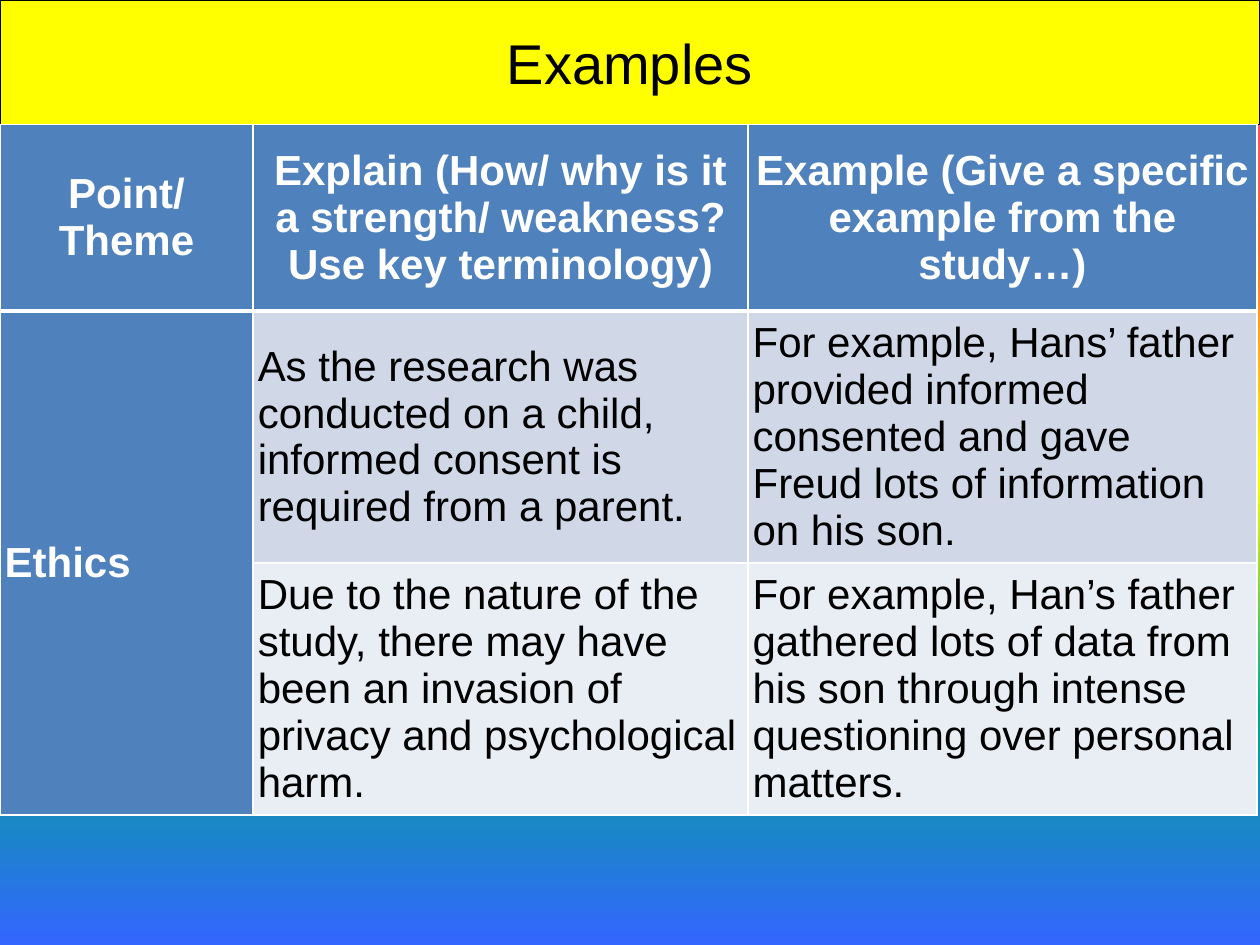
from lxml.etree import SubElement
from pptx import Presentation
from pptx.dml.color import RGBColor as RGB
from pptx.enum.text import MSO_ANCHOR as Anchor, PP_ALIGN as Align
from pptx.oxml.ns import qn
from pptx.util import Pt

TITLE = "Examples"
HEADERS = [
    "Point/ Theme",
    "Explain (How/ why is it a strength/ weakness? Use key terminology)",
    "Example (Give a specific example from the study…)",
]
POINTS = [
    ("Ethics",
     "As the research was conducted on a child, informed consent is required from a parent.",
     "For example, Hans’ father provided informed consented and gave Freud lots of information "
     "on his son."),
    ("",
     "Due to the nature of the study, there may have been an invasion of privacy and "
     "psychological harm.",
     "For example, Han’s father gathered lots of data from his son through intense questioning "
     "over personal matters."),
]

THEME = {
    "font": "Arial", "title_size": 32, "cell_size": 24,
    "dark": "000000", "light": "FFFFFF", "title_fill": "FFFF00",
    "head_fill": "4F81BD", "bands": ["D0D8E8", "E9EDF4"],
    "sky": ["FF3399", "FF6633", "FFFF00", "01A78F", "3366FF"],
}
SLIDE_W, SLIDE_H = 720, 540
TITLE_H = 71.2
COL_WIDTHS = [144.6, 282.8, 290.9]
ROW_HEIGHTS = [106.5, 144, 144]
INSET = 2.7


def write(tf, text, size=THEME["cell_size"], color=THEME["dark"], bold=False, align=Align.LEFT):
    tf.word_wrap = True
    p = tf.paragraphs[0]
    p.alignment = align
    r = p.add_run()
    r.text = text
    r.font.name = THEME["font"]
    r.font.size = Pt(size)
    r.font.bold = bold
    r.font.color.rgb = RGB.from_string(color)


def paint_background(s, colors):
    fill = s.background.fill
    fill.gradient()
    fill.gradient_angle = 270
    stops = s.element.find(".//" + qn("a:gsLst"))
    stops.clear()
    for i, color in enumerate(colors):
        stop = SubElement(stops, qn("a:gs"), pos=str(100000 * i // (len(colors) - 1)))
        SubElement(stop, qn("a:srgbClr"), val=color)


def add_borders(cell, **widths):
    props = cell._tc.get_or_add_tcPr()
    for i, (side, width) in enumerate(widths.items()):
        ln = SubElement(props, qn(f"a:ln{side}"), w=str(Pt(width)))
        SubElement(SubElement(ln, qn("a:solidFill")), qn("a:srgbClr"), val=THEME["light"])
        props.insert(i, ln)


def add_title(s):
    sp = s.shapes.title
    sp.left, sp.top, sp.width, sp.height = Pt(0), Pt(0), Pt(SLIDE_W), Pt(TITLE_H)
    sp.fill.solid()
    sp.fill.fore_color.rgb = RGB.from_string(THEME["title_fill"])
    sp.line.color.rgb = RGB.from_string(THEME["dark"])
    sp.line.width = Pt(0.75)
    sp.text_frame.vertical_anchor = Anchor.MIDDLE
    write(sp.text_frame, TITLE, size=THEME["title_size"], align=Align.CENTER)


def add_points_table(s):
    rows = [HEADERS, *POINTS]
    table = s.shapes.add_table(len(rows), len(HEADERS), Pt(0), Pt(TITLE_H),
                               Pt(sum(COL_WIDTHS)), Pt(sum(ROW_HEIGHTS))).table
    table.first_row = table.horz_banding = False
    for col, width in zip(table.columns, COL_WIDTHS):
        col.width = Pt(width)
    for row, height in zip(table.rows, ROW_HEIGHTS):
        row.height = Pt(height)
    for i, texts in enumerate(rows):
        for j, text in enumerate(texts):
            cell = table.cell(i, j)
            is_head = i == 0 or j == 0
            cell.margin_left = cell.margin_right = Pt(INSET)
            cell.margin_top = cell.margin_bottom = Pt(0)
            cell.vertical_anchor = Anchor.MIDDLE
            cell.fill.solid()
            cell.fill.fore_color.rgb = RGB.from_string(
                THEME["head_fill"] if is_head else THEME["bands"][i - 1])
            add_borders(cell, L=1, R=1, T=3 if i == 1 else 1, B=3 if i == 0 else 1)
            if text:
                write(cell.text_frame, text, bold=is_head,
                      color=THEME["light"] if is_head else THEME["dark"],
                      align=Align.CENTER if i == 0 else Align.LEFT)
    table.cell(1, 0).merge(table.cell(len(POINTS), 0))


def main():
    prs = Presentation()
    prs.slide_width, prs.slide_height = Pt(SLIDE_W), Pt(SLIDE_H)
    s = prs.slides.add_slide(prs.slide_layouts[5])
    paint_background(s, THEME["sky"])
    add_title(s)
    add_points_table(s)
    prs.save("out.pptx")


if __name__ == "__main__":
    main()
